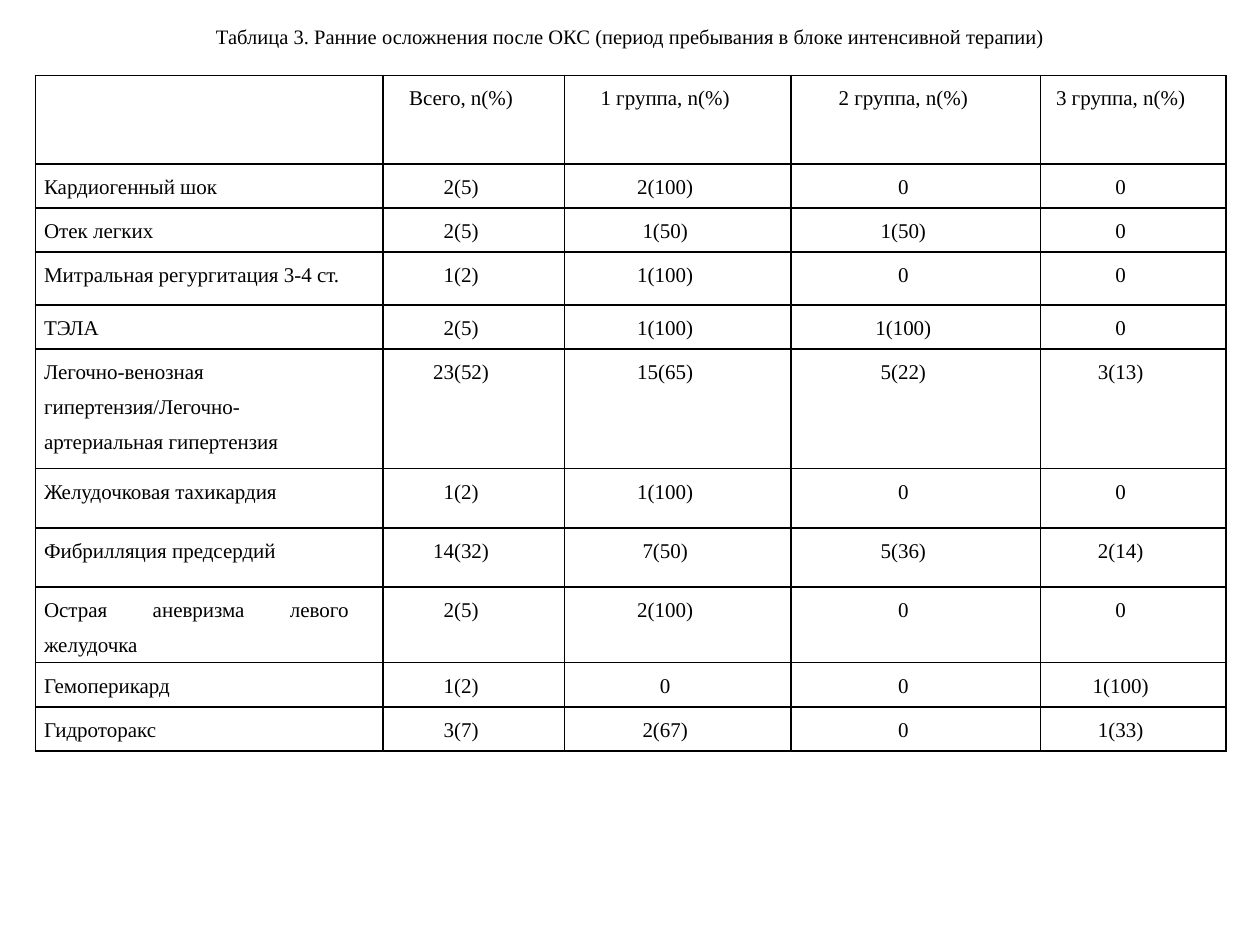
from lxml import etree
from pptx import Presentation
from pptx.dml.color import RGBColor
from pptx.enum import text as t
from pptx.oxml import ns
from pptx.util import Inches, Pt

COLORS = {"ink": "000000", "line": "000000"}
FONT = "Times New Roman"
TITLE = "Таблица 3. Ранние осложнения после ОКС (период пребывания в блоке интенсивной терапии)"
COLS = [2.76, 1.44, 1.8, 1.98, 1.47]
ROWS = [
    (0.7, "", "Всего, n(%)", "1 группа, n(%)", "2 группа, n(%)", "3 группа, n(%)"),
    (0.35, "Кардиогенный шок", "2(5)", "2(100)", "0", "0"),
    (0.35, "Отек легких", "2(5)", "1(50)", "1(50)", "0"),
    (0.42, "Митральная регургитация 3-4 ст.", "1(2)", "1(100)", "0", "0"),
    (0.35, "ТЭЛА", "2(5)", "1(100)", "1(100)", "0"),
    (0.95, "Легочно-венозная гипертензия/Легочно-артериальная гипертензия",
     "23(52)", "15(65)", "5(22)", "3(13)"),
    (0.47, "Желудочковая тахикардия", "1(2)", "1(100)", "0", "0"),
    (0.47, "Фибрилляция предсердий", "14(32)", "7(50)", "5(36)", "2(14)"),
    (0.55, "Острая аневризма левого желудочка", "2(5)", "2(100)", "0", "0"),
    (0.35, "Гемоперикард", "1(2)", "0", "0", "1(100)"),
    (0.35, "Гидроторакс", "3(7)", "2(67)", "0", "1(33)"),
]


def write(frame, words, size=12, align=t.PP_ALIGN.CENTER, space=1.0, right=0):
    para = frame.paragraphs[0]
    para.alignment = align
    para.line_spacing = space
    if right:
        para._p.get_or_add_pPr().set("marR", str(Inches(right)))
    run = para.add_run()
    run.text = words
    run.font.name = FONT
    run.font.size = Pt(size)
    run.font.color.rgb = RGBColor.from_string(COLORS["ink"])


def border(cell, width=1):
    props = cell._tc.get_or_add_tcPr()
    for side in ("a:lnL", "a:lnR", "a:lnT", "a:lnB"):
        line = etree.SubElement(props, ns.qn(side), w=str(Pt(width)))
        fill = etree.SubElement(line, ns.qn("a:solidFill"))
        etree.SubElement(fill, ns.qn("a:srgbClr"), val=COLORS["line"])


def add_title(slide):
    box = slide.shapes.add_textbox(Inches(0.5), Inches(0.1), Inches(9), Inches(0.38))
    frame = box.text_frame
    frame.word_wrap = True
    frame.vertical_anchor = t.MSO_ANCHOR.MIDDLE
    write(frame, TITLE, size=11.7)


def add_grid(slide):
    high = sum(row[0] for row in ROWS)
    table = slide.shapes.add_table(len(ROWS), len(COLS), Inches(0.28), Inches(0.6),
                                   Inches(sum(COLS)), Inches(high)).table
    table.first_row = table.horz_banding = False
    for col, wide in zip(table.columns, COLS):
        col.width = Inches(wide)
    for row, (tall, *words) in zip(table.rows, ROWS):
        row.height = Inches(tall)
        for i, (cell, word) in enumerate(zip(row.cells, words)):
            cell.margin_left = cell.margin_right = Inches(0.07)
            cell.margin_top = cell.margin_bottom = 0
            border(cell)
            cell.fill.background()
            if word:
                align = t.PP_ALIGN.CENTER if i else t.PP_ALIGN.JUSTIFY
                write(cell.text_frame, word, align=align, space=1.5, right=0.2)


def main():
    deck = Presentation()
    deck.slide_width, deck.slide_height = Inches(10), Inches(7.5)
    slide = deck.slides.add_slide(deck.slide_layouts[6])
    add_title(slide)
    add_grid(slide)
    deck.save("out.pptx")


if __name__ == "__main__":
    main()
